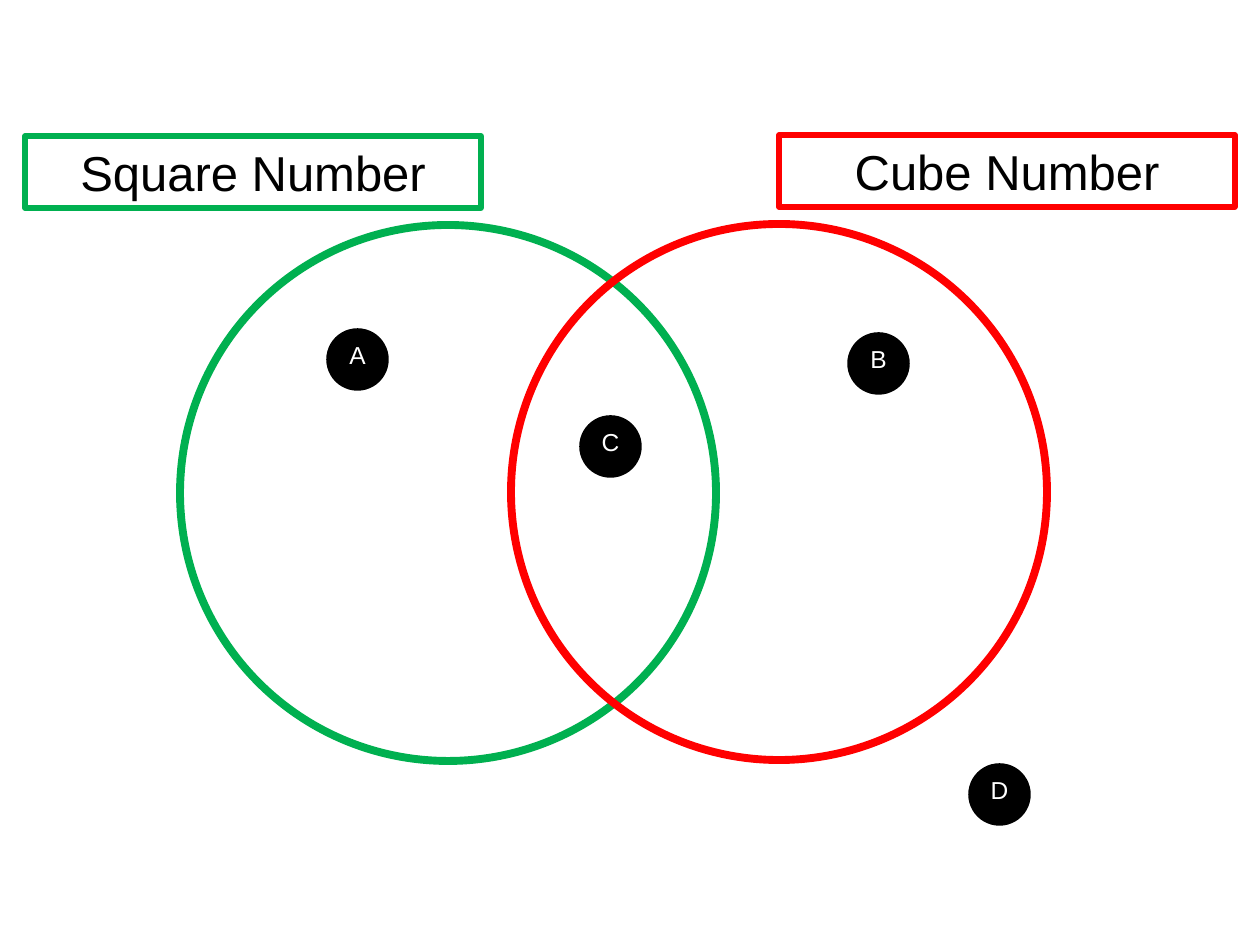
from dataclasses import dataclass

from pptx import Presentation
from pptx.dml.color import RGBColor
from pptx.enum.shapes import MSO_SHAPE
from pptx.enum.text import MSO_ANCHOR, PP_ALIGN
from pptx.util import Emu, Pt

GREEN = RGBColor(0x00, 0xB0, 0x50)
RED = RGBColor(0xFF, 0x00, 0x00)
BLACK = RGBColor(0x00, 0x00, 0x00)
WHITE = RGBColor(0xFF, 0xFF, 0xFF)

PX_PER_INCH = 126
LABEL_W, LABEL_H = 456, 72
CIRCLE_D = 536
DOT_D = 59
LETTER_W, LETTER_H = 45, 50


@dataclass(frozen=True)
class NumberSet:
    name: str
    color: RGBColor
    label_x: int
    label_y: int
    circle_x: int
    circle_y: int


@dataclass(frozen=True)
class Marker:
    letter: str
    x: int
    y: int


SETS = [
    NumberSet("Square Number", GREEN, 25, 136, 180, 225),
    NumberSet("Cube Number", RED, 779, 135, 511, 224),
]
MARKERS = [
    Marker("A", 328, 330),
    Marker("B", 849, 334),
    Marker("C", 581, 417),
    Marker("D", 970, 765),
]


def px(n: int) -> Emu:
    return Emu(round(n * 914400 / PX_PER_INCH))


def write(sp, text: str, *, size: int, color: RGBColor, anchor=MSO_ANCHOR.TOP) -> None:
    tf = sp.text_frame
    tf.word_wrap = True
    tf.vertical_anchor = anchor
    tf.margin_left = tf.margin_right = 0
    p = tf.paragraphs[0]
    p.alignment = PP_ALIGN.CENTER
    r = p.add_run()
    r.text = text
    r.font.name = "Arial"
    r.font.size = Pt(size)
    r.font.color.rgb = color


def add_outline(s, kind, x: int, y: int, w: int, h: int, color: RGBColor, weight: float):
    sp = s.shapes.add_shape(kind, px(x), px(y), px(w), px(h))
    sp.shadow.inherit = False
    sp.fill.background()
    sp.line.color.rgb = color
    sp.line.width = Pt(weight)
    return sp


def draw_set(s, item: NumberSet) -> None:
    label = add_outline(s, MSO_SHAPE.RECTANGLE, item.label_x, item.label_y,
                        LABEL_W, LABEL_H, item.color, 3)
    write(label, item.name, size=28, color=BLACK, anchor=MSO_ANCHOR.MIDDLE)
    add_outline(s, MSO_SHAPE.OVAL, item.circle_x, item.circle_y,
                CIRCLE_D, CIRCLE_D, item.color, 4.5)


def draw_marker(s, item: Marker) -> None:
    dot = add_outline(s, MSO_SHAPE.OVAL, item.x, item.y, DOT_D, DOT_D, BLACK, 2)
    dot.fill.solid()
    dot.fill.fore_color.rgb = BLACK
    box = s.shapes.add_textbox(px(item.x + (DOT_D - LETTER_W) // 2), px(item.y + 4),
                               px(LETTER_W), px(LETTER_H))
    write(box, item.letter, size=14, color=WHITE)


def main() -> None:
    prs = Presentation()
    prs.slide_width, prs.slide_height = px(1260), px(945)
    s = prs.slides.add_slide(prs.slide_layouts[6])

    # Venn circles with their labels
    for item in SETS:
        draw_set(s, item)

    # Lettered regions
    for marker in MARKERS:
        draw_marker(s, marker)

    prs.save("out.pptx")


if __name__ == "__main__":
    main()
